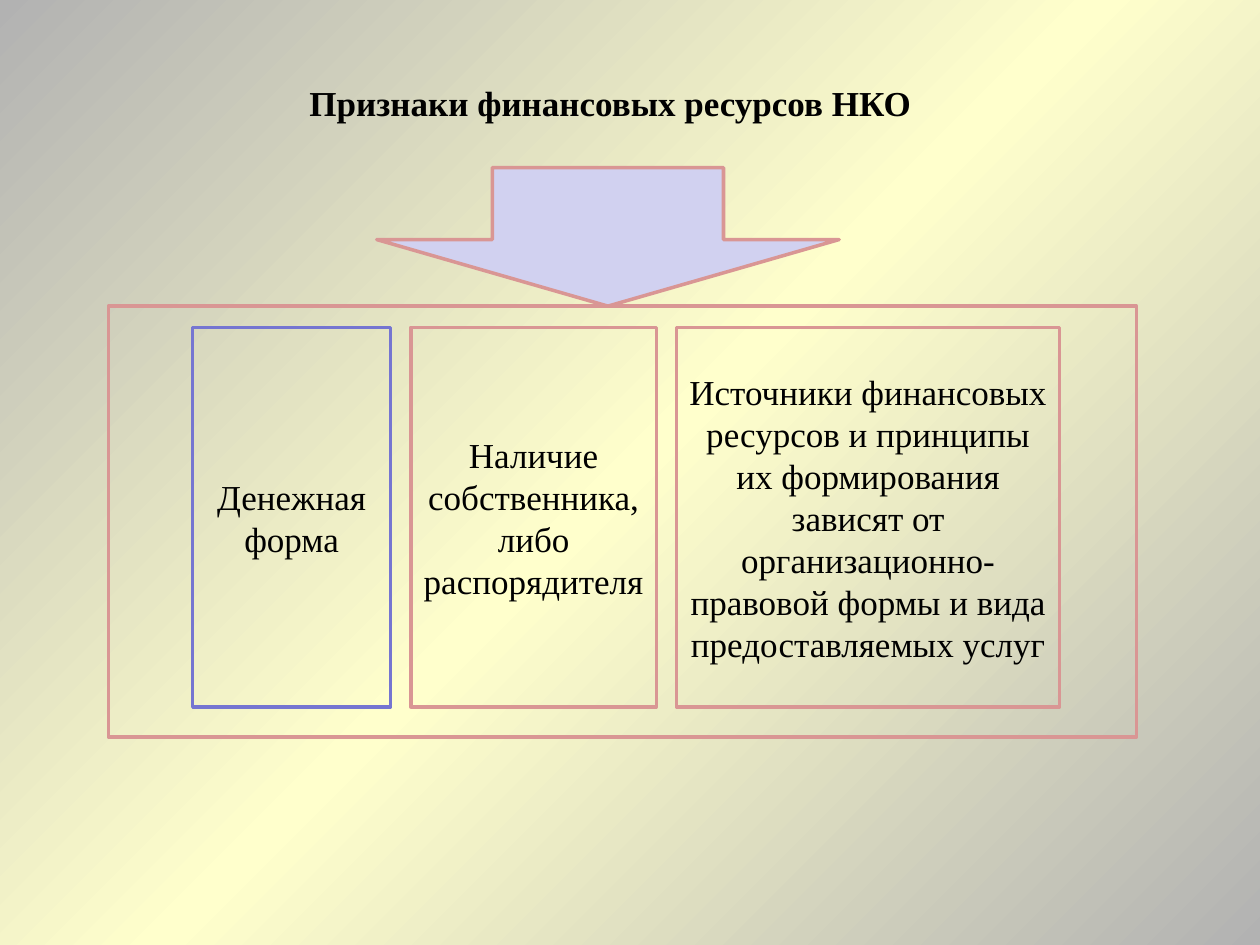
import copy

import pptx
import pptx.dml.color
import pptx.enum.shapes
import pptx.enum.text
import pptx.util

Inches = pptx.util.Inches
MSO_SHAPE = pptx.enum.shapes.MSO_SHAPE

FONT = "Times New Roman"
BLACK, GREY, CREAM = "000000", "B2B2B2", "FFFFCC"
ROSE, BLUE, LAVENDER = "D99694", "7575D1", "D1D1F0"

FEATURES = [
    # left, width, line colour, text
    (1.53, 1.57, BLUE, "Денежная форма"),
    (3.26, 1.95, ROSE, "Наличие собственника, либо распорядителя"),
    (5.37, 3.04, ROSE, "Источники финансовых ресурсов и принципы их формирования "
                       "зависят от организационно-правовой формы и вида "
                       "предоставляемых услуг"),
]


def color(value):
    return pptx.dml.color.RGBColor.from_string(value)


def paint_background(slide):
    """Diagonal gradient, grey in two corners and cream between them."""
    fill = slide.background.fill
    fill.gradient()
    fill.gradient_angle = 315
    first = fill.gradient_stops[0]._gs
    first.addnext(copy.deepcopy(first))
    for stop, value, position in zip(fill.gradient_stops, (GREY, CREAM, GREY), (0, 0.5, 1)):
        stop.color.rgb = color(value)
        stop.position = position


def write_text(shape, text, bold=False):
    frame = shape.text_frame
    frame.word_wrap = True
    frame.vertical_anchor = pptx.enum.text.MSO_ANCHOR.MIDDLE
    paragraph = frame.paragraphs[0]
    paragraph.alignment = pptx.enum.text.PP_ALIGN.CENTER
    run = paragraph.add_run()
    run.text = text
    run.font.name = FONT
    run.font.size = pptx.util.Pt(20)
    run.font.bold = bold
    run.font.color.rgb = color(BLACK)


def add_title(slide, left, top, width, height):
    title = slide.shapes.title
    title.left, title.top = Inches(left), Inches(top)
    title.width, title.height = Inches(width), Inches(height)
    write_text(title, "Признаки финансовых ресурсов НКО", bold=True)


def add_outlined(slide, kind, left, top, width, height, line, fill=None):
    shape = slide.shapes.add_shape(
        kind, Inches(left), Inches(top), Inches(width), Inches(height))
    shape.shadow.inherit = False
    shape.line.color.rgb = color(line)
    shape.line.width = pptx.util.Pt(2)
    if fill:
        shape.fill.solid()
        shape.fill.fore_color.rgb = color(fill)
    else:
        shape.fill.background()
    return shape


def add_arrow(slide, left, top, width, height):
    arrow = add_outlined(slide, MSO_SHAPE.DOWN_ARROW, left, top, width, height,
                         ROSE, LAVENDER)
    arrow.adjustments[0] = 0.5
    arrow.adjustments[1] = 0.48


def add_features(slide, left, top, width, height):
    """Frame around a row of feature boxes."""
    for box_left, box_width, line, text in FEATURES:
        box = add_outlined(slide, MSO_SHAPE.RECTANGLE, box_left, top + 0.17,
                           box_width, height - 0.41, line)
        write_text(box, text)
    add_outlined(slide, MSO_SHAPE.RECTANGLE, left, top, width, height, ROSE)


def main():
    presentation = pptx.Presentation()
    presentation.slide_width, presentation.slide_height = Inches(10), Inches(7.5)
    slide = presentation.slides.add_slide(presentation.slide_layouts[5])
    paint_background(slide)
    add_title(slide, 0, 0.62, 9.69, 0.39)
    add_arrow(slide, 2.99, 1.33, 3.67, 1.1)
    add_features(slide, 0.86, 2.43, 8.16, 3.42)
    presentation.save("out.pptx")


if __name__ == "__main__":
    main()
